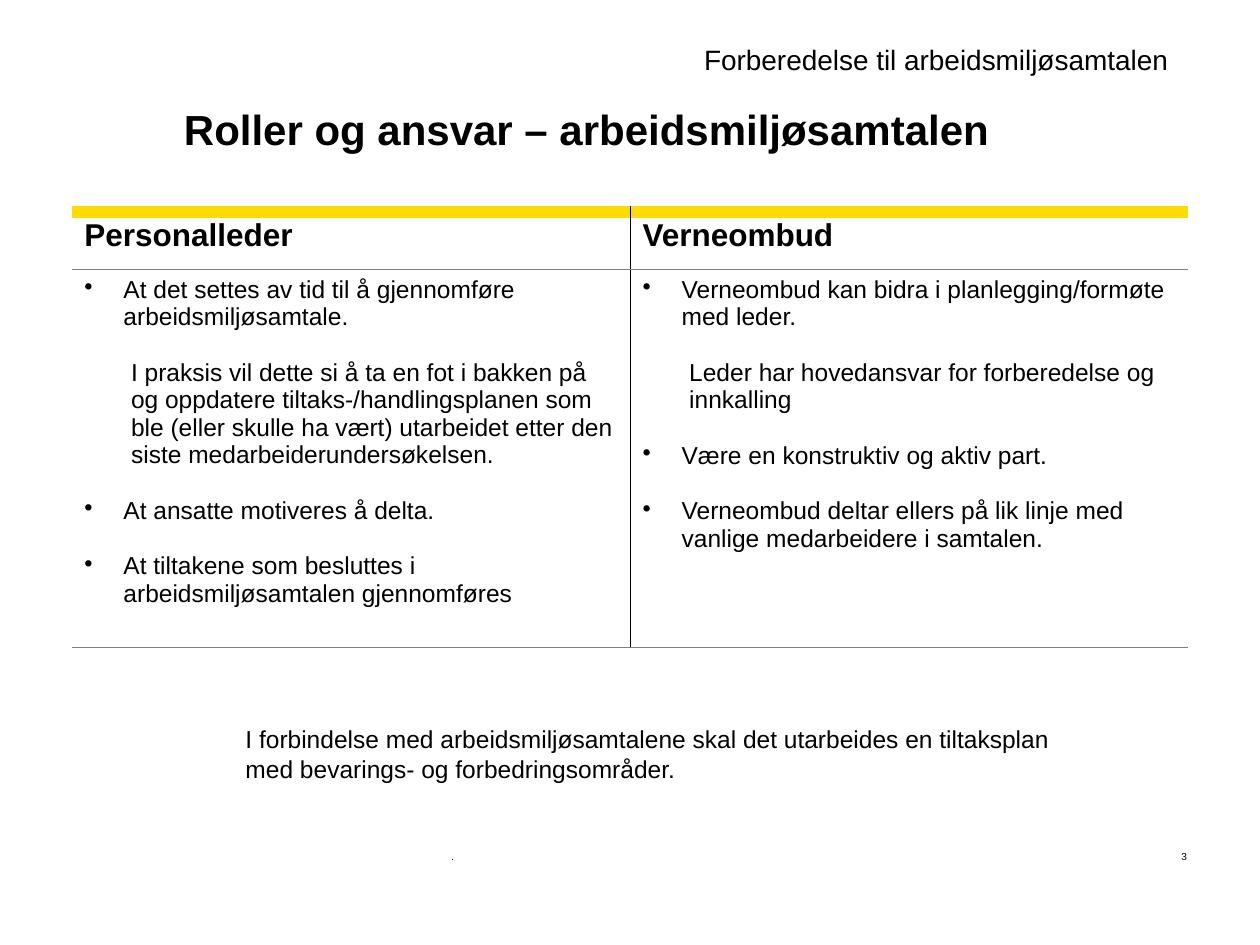
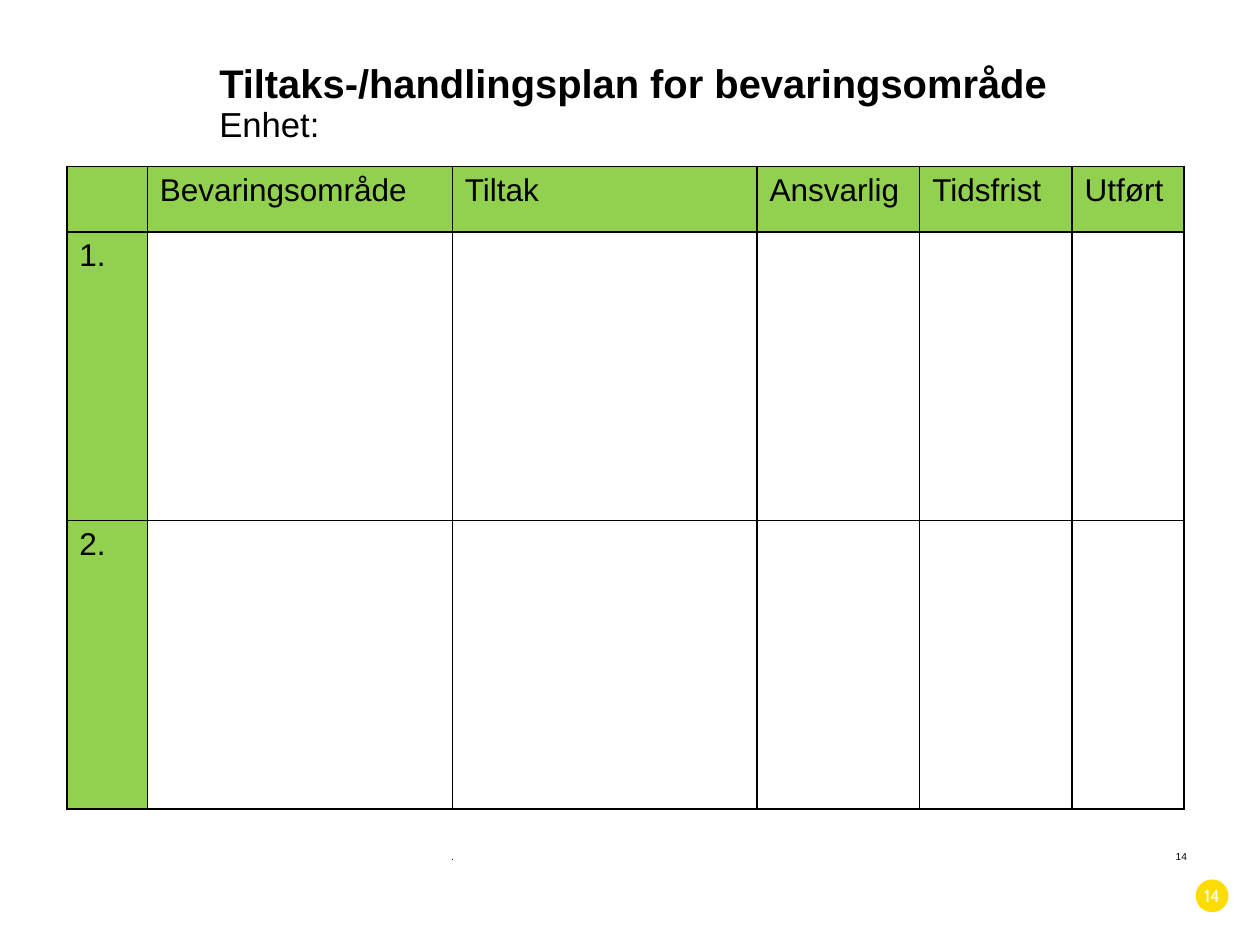
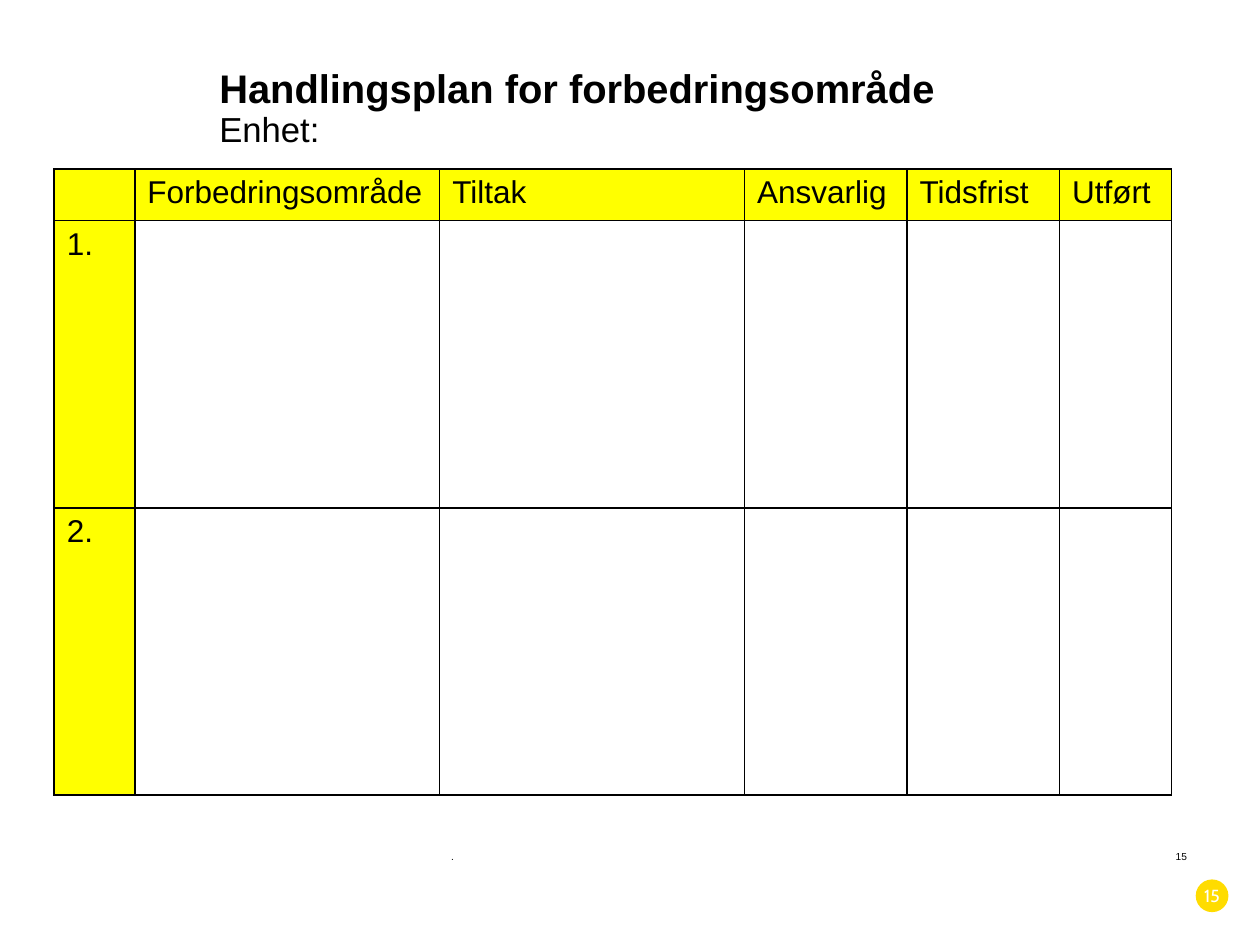
from lxml import etree
from pptx import Presentation
from pptx.dml.color import RGBColor
from pptx.enum.shapes import MSO_SHAPE
from pptx.enum.text import MSO_ANCHOR, MSO_AUTO_SIZE, PP_ALIGN
from pptx.oxml.ns import qn
from pptx.util import Inches, Pt

LEFT, CENTER, RIGHT = PP_ALIGN.LEFT, PP_ALIGN.CENTER, PP_ALIGN.RIGHT
TOP, MIDDLE, BOTTOM = MSO_ANCHOR.TOP, MSO_ANCHOR.MIDDLE, MSO_ANCHOR.BOTTOM
NO_FIT = MSO_AUTO_SIZE.NONE
OVAL = MSO_SHAPE.OVAL
TITLE_ONLY = 5

BLACK, WHITE, GRAY = "000000", "FFFFFF", "808080"
GOLD, GREEN, YELLOW = "FFDC00", "92D050", "FFFF00"

# Content: each role has a heading and (kind, text) items
BULLET, NOTE = "bullet", "note"
ROLES = {
    "Personalleder": [
        (BULLET, "At det settes av tid til å gjennomføre arbeidsmiljøsamtale."),
        (NOTE, "I praksis vil dette si å ta en fot i bakken på og oppdatere "
               "tiltaks-/handlingsplanen som ble (eller skulle ha vært) utarbeidet "
               "etter den siste medarbeiderundersøkelsen."),
        (BULLET, "At ansatte motiveres å delta."),
        (BULLET, "At tiltakene som besluttes i arbeidsmiljøsamtalen gjennomføres"),
    ],
    "Verneombud": [
        (BULLET, "Verneombud kan bidra i planlegging/formøte med leder."),
        (NOTE, "Leder har hovedansvar for forberedelse og innkalling"),
        (BULLET, "Være en konstruktiv og aktiv part."),
        (BULLET, "Verneombud deltar ellers på lik linje med vanlige "
                 "medarbeidere i samtalen."),
    ],
}
ROLES_TITLE = "Roller og ansvar – arbeidsmiljøsamtalen"
ROLES_TOPIC = "Forberedelse til arbeidsmiljøsamtalen"
ROLES_REMARK = ("I forbindelse med arbeidsmiljøsamtalene skal det utarbeides en "
                "tiltaksplan \nmed bevarings- og forbedringsområder.")

PLAN_COLUMNS = ["Tiltak", "Ansvarlig", "Tidsfrist", "Utført"]
PLAN_WIDTHS = [0.64, 2.42, 2.42, 1.29, 1.21, 0.89]
PLANS = [
    dict(number=14, title="Tiltaks-/handlingsplan for bevaringsområde",
         area="Bevaringsområde", color=GREEN, title_box=(1.74, 0.89, 8.86, 0.26),
         corner=(0.53, 1.32), heights=[0.52, 2.29, 2.29]),
    dict(number=15, title="Handlingsplan for forbedringsområde",
         area="Forbedringsområde", color=YELLOW, title_box=(1.74, 0.68, 8.86, 0.51),
         corner=(0.43, 1.34), heights=[0.41, 2.28, 2.28]),
]


def rgb(color):
    return RGBColor.from_string(color)


def add_text(p, text, size=18, bold=False, color=BLACK, font="Arial", align=LEFT):
    """Append text to a paragraph; a newline becomes a line break."""
    p.alignment = align
    for i, line in enumerate(text.split("\n")):
        if i:
            p.add_line_break()
        if line:
            r = p.add_run()
            r.text = line
            r.font.size, r.font.bold, r.font.name = Pt(size), bold, font
            r.font.color.rgb = rgb(color)


def set_frame(tf, margins=(0, 0), anchor=TOP, wrap=True):
    tf.auto_size = NO_FIT
    tf.word_wrap = wrap
    tf.vertical_anchor = anchor
    tf.margin_left = tf.margin_right = Inches(margins[0])
    tf.margin_top = tf.margin_bottom = Inches(margins[1])


def add_box(s, box, text, margins=(0, 0), anchor=TOP, wrap=True, **fmt):
    tf = s.shapes.add_textbox(*map(Inches, box)).text_frame
    set_frame(tf, margins, anchor, wrap)
    add_text(tf.paragraphs[0], text, **fmt)


def add_slide(prs, number, title_box, title_parts):
    """Slide with title and footer; title_parts are (text, size, bold)."""
    s = prs.slides.add_slide(prs.slide_layouts[TITLE_ONLY])
    title = s.shapes.title
    title.left, title.top, title.width, title.height = map(Inches, title_box)
    set_frame(title.text_frame, anchor=BOTTOM)
    p = title.text_frame.paragraphs[0]
    p.line_spacing = 0.9
    for text, size, bold in title_parts:
        add_text(p, text, size=size, bold=bold)
    add_box(s, (3.58, 6.7, 5.19, 0.2), ".", anchor=MIDDLE, size=5.8)
    add_box(s, (9.17, 6.7, 0.25, 0.2), str(number), anchor=MIDDLE, size=5.8, align=RIGHT)
    return s


def add_badge(s, number):
    sp = s.shapes.add_shape(OVAL, *map(Inches, (9.49, 6.98, 0.26, 0.26)))
    sp.shadow.inherit = False
    sp.fill.solid()
    sp.fill.fore_color.rgb = rgb(GOLD)
    sp.line.fill.background()
    set_frame(sp.text_frame, anchor=MIDDLE, wrap=False)
    add_text(sp.text_frame.paragraphs[0], str(number), size=10, color=WHITE,
             font="Cabin", align=CENTER)


def add_grid(s, corner, widths, heights):
    box = (*corner, sum(widths), sum(heights))
    table = s.shapes.add_table(len(heights), len(widths), *map(Inches, box)).table
    table.first_row = table.horz_banding = False
    for column, width in zip(table.columns, widths):
        column.width = Inches(width)
    for row, height in zip(table.rows, heights):
        row.height = Inches(height)
    return table


def style_cell(cell, fill=None, **borders):
    """Fill a cell and draw its L, R, T, B borders, each (color, points)."""
    if fill:
        cell.fill.solid()
        cell.fill.fore_color.rgb = rgb(fill)
    else:
        cell.fill.background()
    tcPr = cell._tc.get_or_add_tcPr()
    for i, side in enumerate("LRTB"):
        ln = etree.Element(qn("a:ln" + side))
        tcPr.insert(i, ln)
        if side in borders:
            color, points = borders[side]
            ln.set("w", str(Pt(points)))
            solid = etree.SubElement(ln, qn("a:solidFill"))
            etree.SubElement(solid, qn("a:srgbClr"), val=color)
        else:
            etree.SubElement(ln, qn("a:noFill"))


def add_item(p, kind, text):
    pPr = p._p.get_or_add_pPr()
    if kind == BULLET:
        pPr.set("marL", str(Inches(0.31)))
        pPr.set("indent", str(-Inches(0.31)))
        etree.SubElement(pPr, qn("a:buChar"), char="•")
    else:
        p.level = 1
        pPr.set("marL", str(Inches(0.37)))
        pPr.set("indent", "0")
    add_text(p, text, size=14)


def build_roles(prs):
    s = add_slide(prs, 3, (1.46, 0.72, 6.93, 0.51), [(ROLES_TITLE, 24, True)])
    table = add_grid(s, (0.57, 1.68), [4.43, 4.43], [0.46, 3])
    band, rule, divider = (GOLD, 7.87), (GRAY, 0.25), (BLACK, 0.25)
    for col, (heading, items) in enumerate(ROLES.items()):
        inner = {"L" if col else "R": divider}
        head, body = table.cell(0, col), table.cell(1, col)
        style_cell(head, T=band, B=rule, **inner)
        style_cell(body, T=rule, B=rule, **inner)
        add_text(head.text_frame.paragraphs[0], heading, bold=True)
        tf = body.text_frame
        for i, (kind, text) in enumerate(items):
            p = tf.add_paragraph() if i else tf.paragraphs[0]
            if i:
                p.space_before = Pt(16)
            add_item(p, kind, text)
    add_box(s, (1.85, 5.7, 6.66, 0.57), ROLES_REMARK, margins=(0.1, 0.05),
            wrap=False, size=14)
    add_box(s, (5.49, 0.29, 3.93, 0.37), ROLES_TOPIC, margins=(0.1, 0.05),
            wrap=False, size=16)


def build_plan(prs, plan):
    s = add_slide(prs, plan["number"], plan["title_box"],
                  [(plan["title"] + "\n", 22.8, True), ("Enhet:", 19.8, False)])
    table = add_grid(s, plan["corner"], PLAN_WIDTHS, plan["heights"])
    headings = ["", plan["area"], *PLAN_COLUMNS]
    borders = dict.fromkeys("LRTB", (BLACK, 1))
    for row in range(len(plan["heights"])):
        for col, heading in enumerate(headings):
            cell = table.cell(row, col)
            is_label = row == 0 or col == 0
            style_cell(cell, plan["color"] if is_label else None, **borders)
            if is_label:
                text = f"{row}." if row else heading
                add_text(cell.text_frame.paragraphs[0], text)
    add_badge(s, plan["number"])


def main():
    prs = Presentation()
    prs.slide_width, prs.slide_height = Inches(10), Inches(7.5)
    build_roles(prs)
    for plan in PLANS:
        build_plan(prs, plan)
    prs.save("out.pptx")


if __name__ == "__main__":
    main()
